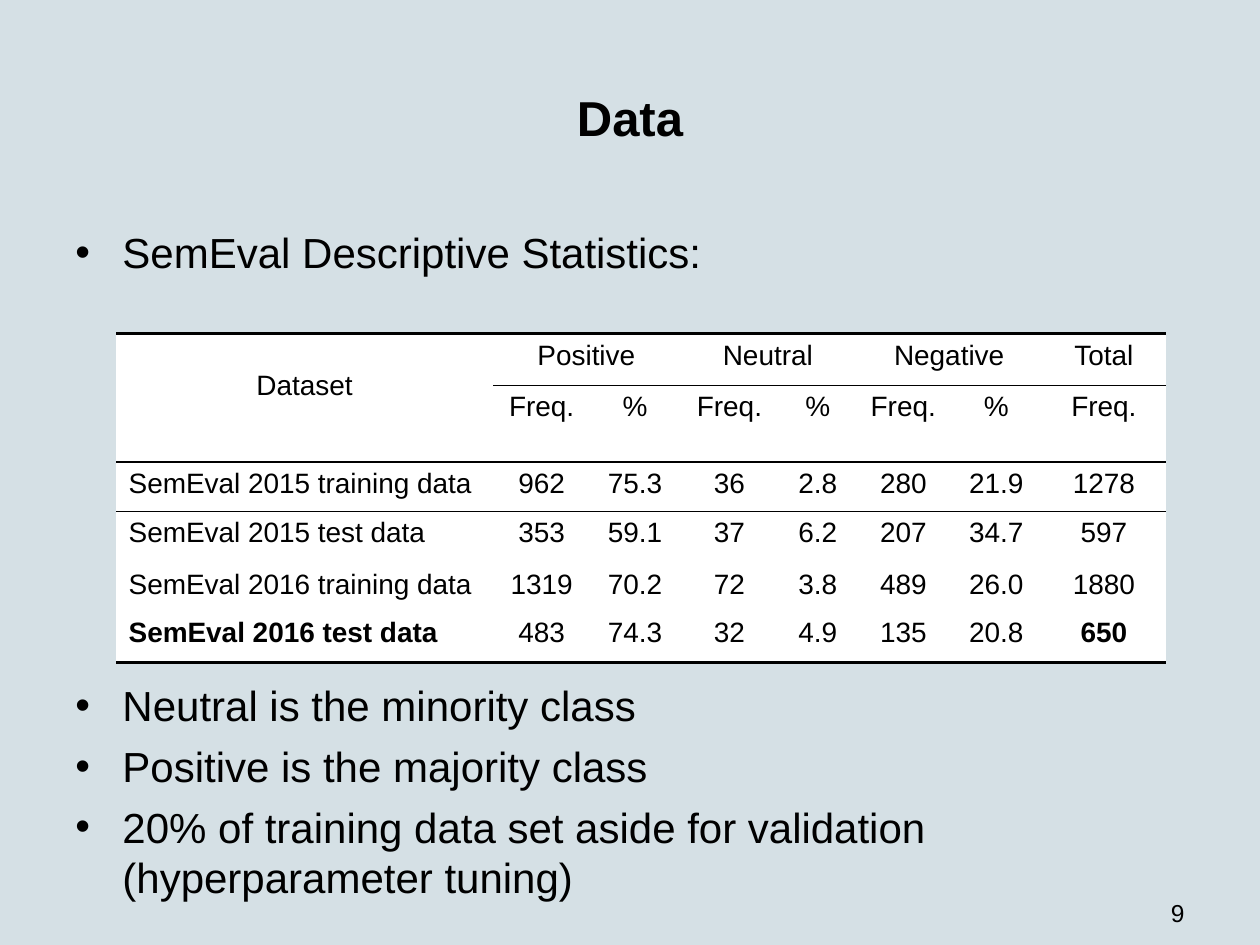
from dataclasses import dataclass

from lxml.etree import SubElement
from pptx import Presentation
from pptx.dml.color import RGBColor
from pptx.enum.text import MSO_ANCHOR, PP_ALIGN
from pptx.oxml.ns import qn
from pptx.util import Cm, Pt

FONT = "Arial"
BLACK, WHITE, BACKGROUND = "000000", "FFFFFF", "D5E0E5"


@dataclass
class Area:
    """Place and size in centimetres."""
    left: float
    top: float
    width: float
    height: float

    def lengths(self) -> tuple:
        return tuple(Cm(n) for n in (self.left, self.top, self.width, self.height))


@dataclass
class Bullet:
    text: str
    space_before: float = 2.9


TITLE = Area(1.27, 0.76, 22.86, 3.18)
BODY = Area(1.27, 4.45, 22.86, 12.57)
PAGE_NUMBER = Area(18.21, 17.35, 5.92, 1.32)
TABLE = Area(2.34, 6.73, 21.16, 6.6)

# The second bullet starts below the table
BULLETS = [
    Bullet("SemEval Descriptive Statistics:"),
    Bullet("Neutral is the minority class", space_before=227.2),
    Bullet("Positive is the majority class"),
    Bullet("20% of training data set aside for validation (hyperparameter tuning)"),
]

COLUMN_WIDTHS = [7.6, 1.96, 1.8, 2.01, 1.55, 1.9, 1.85, 2.49]
ROW_HEIGHTS = [1.04, 1.52, 0.99, 1.04, 0.97, 1.04]
ROWS = [
    ["Dataset", "Positive", "", "Neutral", "", "Negative", "", "Total"],
    ["", "Freq.", "%", "Freq.", "%", "Freq.", "%", "Freq."],
    ["SemEval 2015 training data", "962", "75.3", "36", "2.8", "280", "21.9", "1278"],
    ["SemEval 2015 test data", "353", "59.1", "37", "6.2", "207", "34.7", "597"],
    ["SemEval 2016 training data", "1319", "70.2", "72", "3.8", "489", "26.0", "1880"],
    ["SemEval 2016 test data", "483", "74.3", "32", "4.9", "135", "20.8", "650"],
]
# Line widths in points above each row, and below the last one
RULES = [2, 1, 1, 0.5, 0, 0, 2]


def color(value: str) -> RGBColor:
    return RGBColor.from_string(value)


def write(para, text: str, *, size: float, bold: bool = False,
          align=PP_ALIGN.LEFT, fill: str = BLACK) -> None:
    para.alignment = align
    span = para.add_run()
    span.text = text
    span.font.name = FONT
    span.font.size = Pt(size)
    span.font.bold = bold
    span.font.color.rgb = color(fill)


def add_box(page, area: Area, anchor=MSO_ANCHOR.TOP):
    frame = page.shapes.add_textbox(*area.lengths()).text_frame
    frame.word_wrap = True
    frame.vertical_anchor = anchor
    return frame


def add_bullets(frame, bullets: list[Bullet]) -> None:
    for index, bullet in enumerate(bullets):
        para = frame.add_paragraph() if index else frame.paragraphs[0]
        write(para, bullet.text, size=24)
        para.space_before = Pt(bullet.space_before)
        para.space_after = Pt(2.9)
        properties = para._p.get_or_add_pPr()
        properties.set("marL", str(Cm(0.95)))
        properties.set("indent", str(Cm(-0.95)))
        SubElement(properties, qn("a:buFont"), typeface=FONT)
        SubElement(properties, qn("a:buChar"), char="•")


def set_borders(cell, top: float, bottom: float) -> None:
    properties = cell._tc.get_or_add_tcPr()
    for side, width in (("L", 0), ("R", 0), ("T", top), ("B", bottom)):
        line = SubElement(properties, qn(f"a:ln{side}"), w=str(Pt(width)))
        if width:
            fill = SubElement(line, qn("a:solidFill"))
            SubElement(fill, qn("a:srgbClr"), val=BLACK)
        else:
            SubElement(line, qn("a:noFill"))


def add_statistics(page) -> None:
    table = page.shapes.add_table(len(ROWS), len(COLUMN_WIDTHS), *TABLE.lengths()).table
    table.first_row = table.horz_banding = False
    for column, width in zip(table.columns, COLUMN_WIDTHS):
        column.width = Cm(width)
    for row, height in zip(table.rows, ROW_HEIGHTS):
        row.height = Cm(height)

    for r, values in enumerate(ROWS):
        for c, text in enumerate(values):
            cell = table.cell(r, c)
            # No rule crosses the two-row heading of the first column
            top = 0 if (r, c) == (1, 0) else RULES[r]
            bottom = 0 if (r, c) == (0, 0) else RULES[r + 1]
            set_borders(cell, top, bottom)
            cell.fill.solid()
            cell.fill.fore_color.rgb = color(WHITE)
            if text:
                is_name = c == 0 and r > 1
                write(cell.text_frame.paragraphs[0], text, size=16,
                      bold=r == len(ROWS) - 1 and c in (0, len(values) - 1),
                      align=PP_ALIGN.LEFT if is_name else PP_ALIGN.CENTER)

    # Merged headings
    table.cell(0, 0).merge(table.cell(1, 0))
    table.cell(0, 0).margin_top = Cm(0.74)
    for c in (1, 3, 5):
        table.cell(0, c).merge(table.cell(0, c + 1))


def main() -> None:
    deck = Presentation()
    deck.slide_width, deck.slide_height = Cm(25.4), Cm(19.05)
    page = deck.slides.add_slide(deck.slide_layouts[6])
    page.background.fill.solid()
    page.background.fill.fore_color.rgb = color(BACKGROUND)

    # Title and bullets
    title = add_box(page, TITLE, MSO_ANCHOR.MIDDLE)
    write(title.paragraphs[0], "Data", size=28, bold=True, align=PP_ALIGN.CENTER)
    add_bullets(add_box(page, BODY), BULLETS)

    # Page number
    number = add_box(page, PAGE_NUMBER)
    number.margin_top = Cm(0.76)
    write(number.paragraphs[0], "9", size=14, align=PP_ALIGN.RIGHT)

    add_statistics(page)
    deck.save("out.pptx")


if __name__ == "__main__":
    main()
